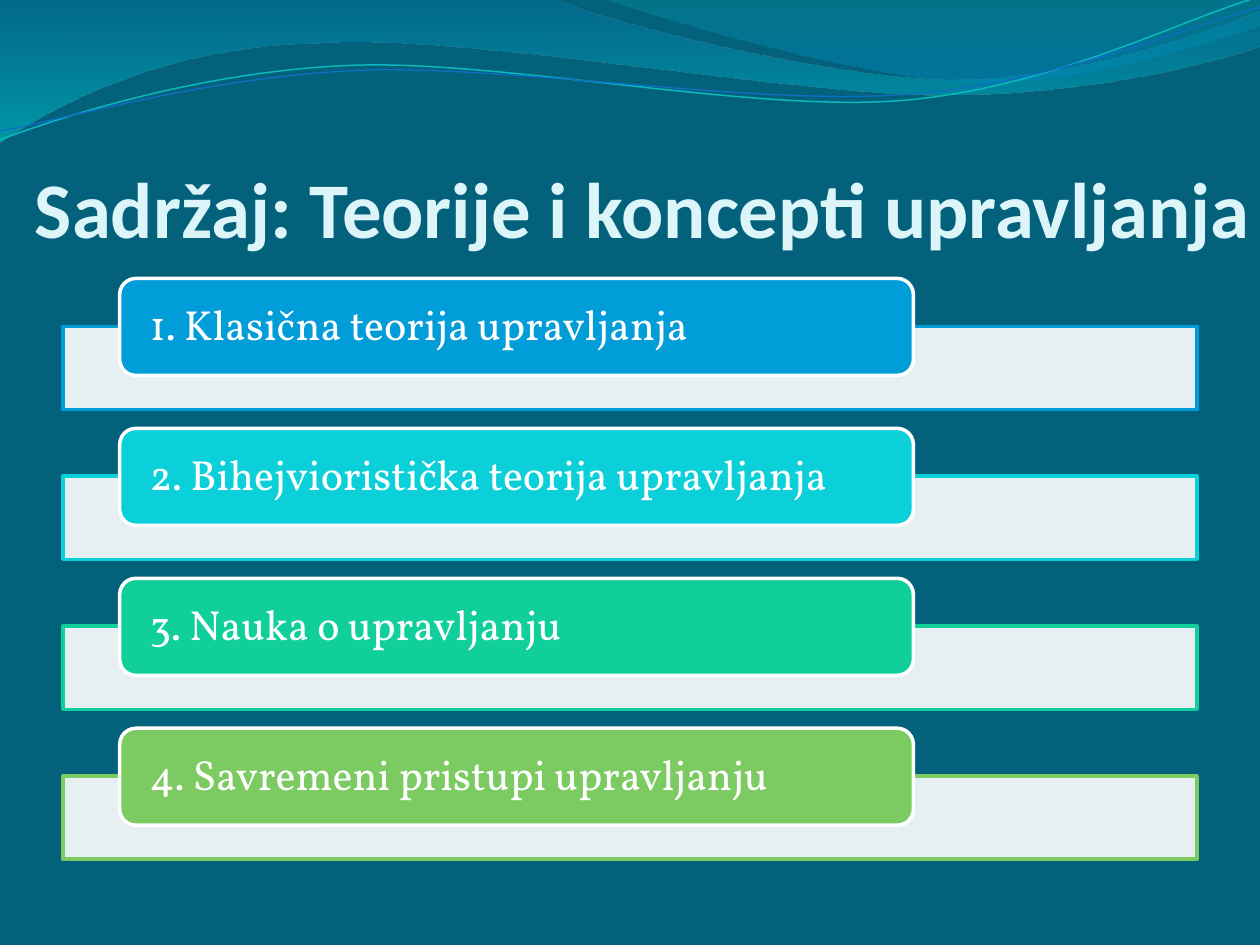
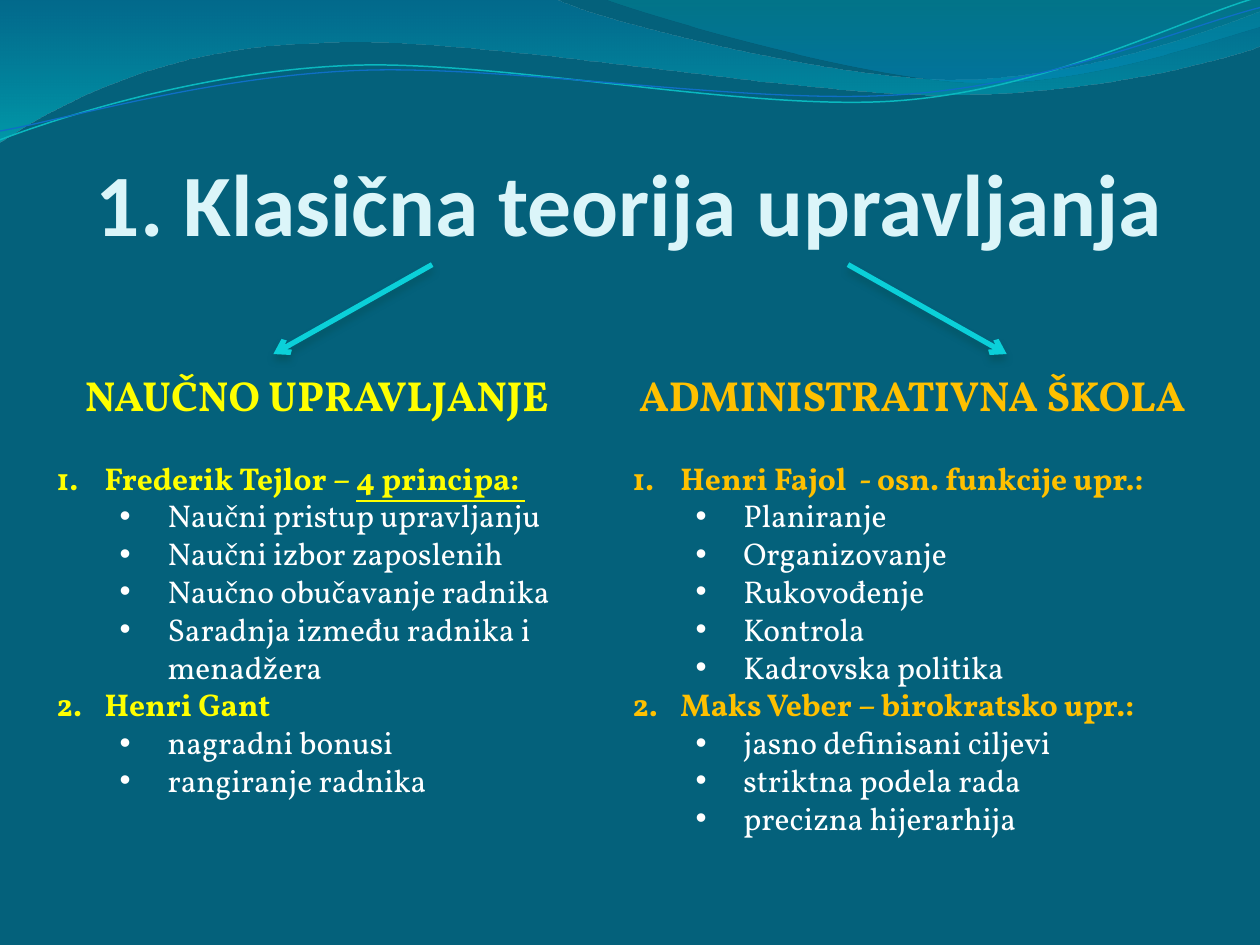
"""Build two slides on theories and concepts of management."""
from lxml import etree
from pptx import Presentation
from pptx.dml.color import RGBColor
from pptx.enum.shapes import MSO_CONNECTOR, MSO_SHAPE
from pptx.enum.text import MSO_ANCHOR, MSO_AUTO_SIZE, PP_ALIGN
from pptx.oxml.ns import qn
from pptx.util import Inches, Pt

RECT, ROUND = MSO_SHAPE.RECTANGLE, MSO_SHAPE.ROUNDED_RECTANGLE
STRAIGHT = MSO_CONNECTOR.STRAIGHT
TOP, MIDDLE, BOTTOM = MSO_ANCHOR.TOP, MSO_ANCHOR.MIDDLE, MSO_ANCHOR.BOTTOM
LEFT, CENTER = PP_ALIGN.LEFT, PP_ALIGN.CENTER
NO_AUTOFIT = MSO_AUTO_SIZE.NONE
TITLE_ONLY, COMPARISON = 5, 4

BACKGROUND, TITLE, WHITE = "04617B", "DBF5F9", "FFFFFF"
CYAN, YELLOW, ORANGE, SHADOW = "0BD0D9", "FFFF00", "FFC000", "024B4E"
HEAD_FONT, BODY_FONT = "Calibri", "Vollkorn"

BANDS = [
    ([(0, 0), (4.4, -0.01),
      ((4.76, 0.17), (6.64, 0.63), (7.58, 0.63)),
      ((8.53, 0.63), (9.58, 0.26), (10, 0.09)), (10.01, 0.36),
      ((9.83, 0.44), (8.7, 0.76), (7.46, 0.75)),
      ((6.22, 0.75), (3.82, 0.28), (2.57, 0.34)),
      ((1.29, 0.36), (0.46, 0.83), (-0.01, 1.13))],
     [(0, "0074A1", 45), (1, "00C6CF", 55)]),
    ([(4.79, -0.01),
      ((5.09, 0.11), (6.82, 0.62), (7.69, 0.65)),
      ((8.56, 0.69), (9.61, 0.32), (10, 0.21)), (10, 0)],
     [(0, "00A1A9", 30), (0.8, "008BBF", 45)]),
]
STRANDS = [
    ([(0, 1.11),
      ((0.48, 0.93), (1.58, 0.57), (2.77, 0.52)),
      ((3.95, 0.47), (5.93, 0.89), (7.13, 0.8)),
      ((8.33, 0.71), (9.38, 0.15), (9.98, -0.02))], "0AB8BF", 0.85),
    ([(0, 1.04),
      ((0.47, 0.96), (1.64, 0.61), (2.83, 0.56)),
      ((4.03, 0.51), (5.97, 0.84), (7.17, 0.75)),
      ((8.36, 0.67), (9.41, 0.21), (10, 0.06))], "0F6FC6", 0.75),
]

TOPICS = [
    ("1. Klasična teorija upravljanja", "009DD9"),
    ("2. Bihejvioristička teorija upravljanja", CYAN),
    ("3. Nauka o upravljanju", "10CF9B"),
    ("4. Savremeni pristupi upravljanju", "7CCA62"),
]
SCHOOLS = [
    ("NAUČNO UPRAVLJANJE", YELLOW, (0.35, 2.88, 4.33, 0.5), (0.35, 3.59, 4.33, 3.13), [
        (("Frederik Tejlor – ", "4 principa: "),
         ["Naučni pristup upravljanju", "Naučni izbor zaposlenih",
          "Naučno obučavanje radnika", "Saradnja između radnika i menadžera"]),
        (("Henri Gant",), ["nagradni bonusi", "rangiranje radnika"])]),
    ("ADMINISTRATIVNA ŠKOLA", ORANGE, (4.84, 2.88, 4.8, 0.5), (4.92, 3.59, 4.33, 3.43), [
        (("Henri Fajol  - osn. funkcije upr.:",),
         ["Planiranje", "Organizovanje", "Rukovođenje", "Kontrola", "Kadrovska politika"]),
        (("Maks Veber – birokratsko upr.:",),
         ["jasno definisani ciljevi", "striktna podela rada", "precizna hijerarhija"])]),
]


def rgb(color):
    return RGBColor.from_string(color)


def add_xml(parent, tag, **attributes):
    return etree.SubElement(parent, qn(tag), {k: str(v) for k, v in attributes.items()})


def set_opacity(sp, *percents):
    for color, percent in zip(sp.element.spPr.iter(qn("a:srgbClr")), percents):
        add_xml(color, "a:alpha", val=percent * 1000)


def is_curve(part):
    return len(part) == 3


def bend(sp, parts):
    segments = iter(list(sp.element.spPr.iter(qn("a:lnTo"))))
    for part in parts:
        first = next(segments)
        if is_curve(part):
            first.tag = qn("a:cubicBezTo")
            for _ in range(2):
                extra = next(segments)
                first.append(extra[0])
                extra.getparent().remove(extra)


class Deck:
    def __init__(self):
        self.prs = Presentation()
        self.prs.slide_width, self.prs.slide_height = Inches(10), Inches(7.5)
        fill = self.prs.slide_master.background.fill
        fill.solid()
        fill.fore_color.rgb = rgb(BACKGROUND)

    def slide(self, layout, title, box, size):
        self.s = self.prs.slides.add_slide(self.prs.slide_layouts[layout])
        tf = self.frame(self.s.shapes.title, box, BOTTOM, (0, 0.05, 0, 0))
        self.paragraph(tf.paragraphs[0], [title], size, TITLE, True, CENTER, HEAD_FONT)

    def master_waves(self):
        waves = [self.band(*band) for band in BANDS]
        waves += [self.strand(*strand) for strand in STRANDS]
        tree = self.prs.slide_master.shapes.element
        for i, wave in enumerate(waves):
            wave.element.nvSpPr.cNvPr.set("id", str(101 + i))
            tree.insert(2 + i, wave.element)

    def outline(self, route, close):
        start, *parts = route
        points = []
        for part in parts:
            points += part if is_curve(part) else [part]
        builder = self.s.shapes.build_freeform(*map(Inches, start))
        builder.add_line_segments([(Inches(x), Inches(y)) for x, y in points], close=close)
        sp = builder.convert_to_shape()
        bend(sp, parts)
        sp.shadow.inherit = False
        return sp

    def band(self, route, stops):
        sp = self.outline(route, True)
        sp.line.fill.background()
        sp.fill.gradient()
        sp.fill.gradient_angle = 270
        for stop, (position, color, _) in zip(sp.fill.gradient_stops, stops):
            stop.position = position
            stop.color.rgb = rgb(color)
        set_opacity(sp, *(opacity for _, _, opacity in stops))
        return sp

    def strand(self, route, color, width):
        sp = self.outline(route, False)
        sp.fill.background()
        self.stroke(sp, color, width)
        return sp

    def stroke(self, sp, color, width):
        sp.line.color.rgb = rgb(color)
        sp.line.width = Pt(width)

    def frame(self, sp, box, anchor, insets=(0.1, 0.05, 0.1, 0.05)):
        sp.left, sp.top, sp.width, sp.height = map(Inches, box)
        tf = sp.text_frame
        tf.word_wrap = True
        tf.auto_size = NO_AUTOFIT
        tf.vertical_anchor = anchor
        tf.margin_left, tf.margin_top, tf.margin_right, tf.margin_bottom = map(Inches, insets)
        return tf

    def paragraph(self, p, texts, size, color, bold=False, align=LEFT, font=BODY_FONT):
        for i, text in enumerate(texts):
            r = p.add_run()
            r.text = text
            if i:
                r.font.underline = True
        p.alignment = align
        p.space_before = Pt(0)
        p.font.name, p.font.size, p.font.bold = font, Pt(size), bold
        p.font.color.rgb = rgb(color)

    def box(self, kind, box, fill, line):
        sp = self.s.shapes.add_shape(kind, *map(Inches, box))
        sp.shadow.inherit = False
        sp.fill.solid()
        sp.fill.fore_color.rgb = rgb(fill)
        self.stroke(sp, line, 2)
        return sp

    def topic(self, text, color, top):
        bar = self.box(RECT, (0.5, top + 0.38, 9, 0.66), WHITE, color)
        set_opacity(bar, 90)
        label_box = (0.95, top, 6.3, 0.77)
        label = self.box(ROUND, label_box, color, WHITE)
        tf = self.frame(label, label_box, MIDDLE, (0.2, 0, 0.2, 0))
        self.paragraph(tf.paragraphs[0], [text], 24, WHITE)
        tf.paragraphs[0].line_spacing = 0.9

    def arrow(self, start, end):
        line = self.s.shapes.add_connector(STRAIGHT, *map(Inches, start + end))
        self.stroke(line, CYAN, 3)
        spPr = line.element.spPr
        add_xml(spPr.find(qn("a:ln")), "a:tailEnd", type="arrow")
        shadow = add_xml(add_xml(spPr, "a:effectLst"), "a:outerShdw", blurRad=Pt(4.5),
                         dist=Pt(3), dir=5400000, rotWithShape=0)
        add_xml(add_xml(shadow, "a:srgbClr", val=SHADOW), "a:alpha", val=48000)

    def heading(self, idx, text, color, box):
        tf = self.frame(self.s.placeholders[idx], box, TOP)
        self.paragraph(tf.paragraphs[0], [text], 24, color, True, CENTER)

    def item(self, p, texts, color, level):
        p.level = level
        pPr = p._p.get_or_add_pPr()
        pPr.set("marL", str(Inches(0.38 + 0.5 * level)))
        pPr.set("indent", str(Inches(-0.38)))
        add_xml(add_xml(pPr, "a:buClr"), "a:srgbClr", val=color)
        add_xml(pPr, "a:buFont", typeface="Arial" if level else BODY_FONT)
        if level:
            add_xml(pPr, "a:buChar", char="•")
        else:
            add_xml(pPr, "a:buAutoNum", type="arabicPeriod")
        self.paragraph(p, texts, 18, color, not level)

    def outline_list(self, idx, groups, color, box):
        tf = self.frame(self.s.placeholders[idx], box, TOP)
        items = []
        for authors, ideas in groups:
            items.append((authors, color, 0))
            items += [([idea], WHITE, 1) for idea in ideas]
        for i, item in enumerate(items):
            self.item(tf.add_paragraph() if i else tf.paragraphs[0], *item)


def main():
    deck = Deck()
    deck.slide(TITLE_ONLY, "Sadržaj: Teorije i koncepti upravljanja", (0.2, 0.77, 9.8, 1.25), 45)
    deck.master_waves()
    for i, (text, color) in enumerate(TOPICS):
        deck.topic(text, color, 2.21 + 1.19 * i)

    deck.slide(COMPARISON, "1. Klasična teorija upravljanja", (0.5, 0.77, 9, 1.25), 50)
    deck.arrow((3.43, 2.1), (2.17, 2.81))
    deck.arrow((6.73, 2.1), (7.99, 2.81))
    for i, (name, color, head_box, list_box, groups) in enumerate(SCHOOLS):
        deck.heading(1 + 2 * i, name, color, head_box)
        deck.outline_list(2 + 2 * i, groups, color, list_box)
    deck.prs.save("out.pptx")


if __name__ == "__main__":
    main()
